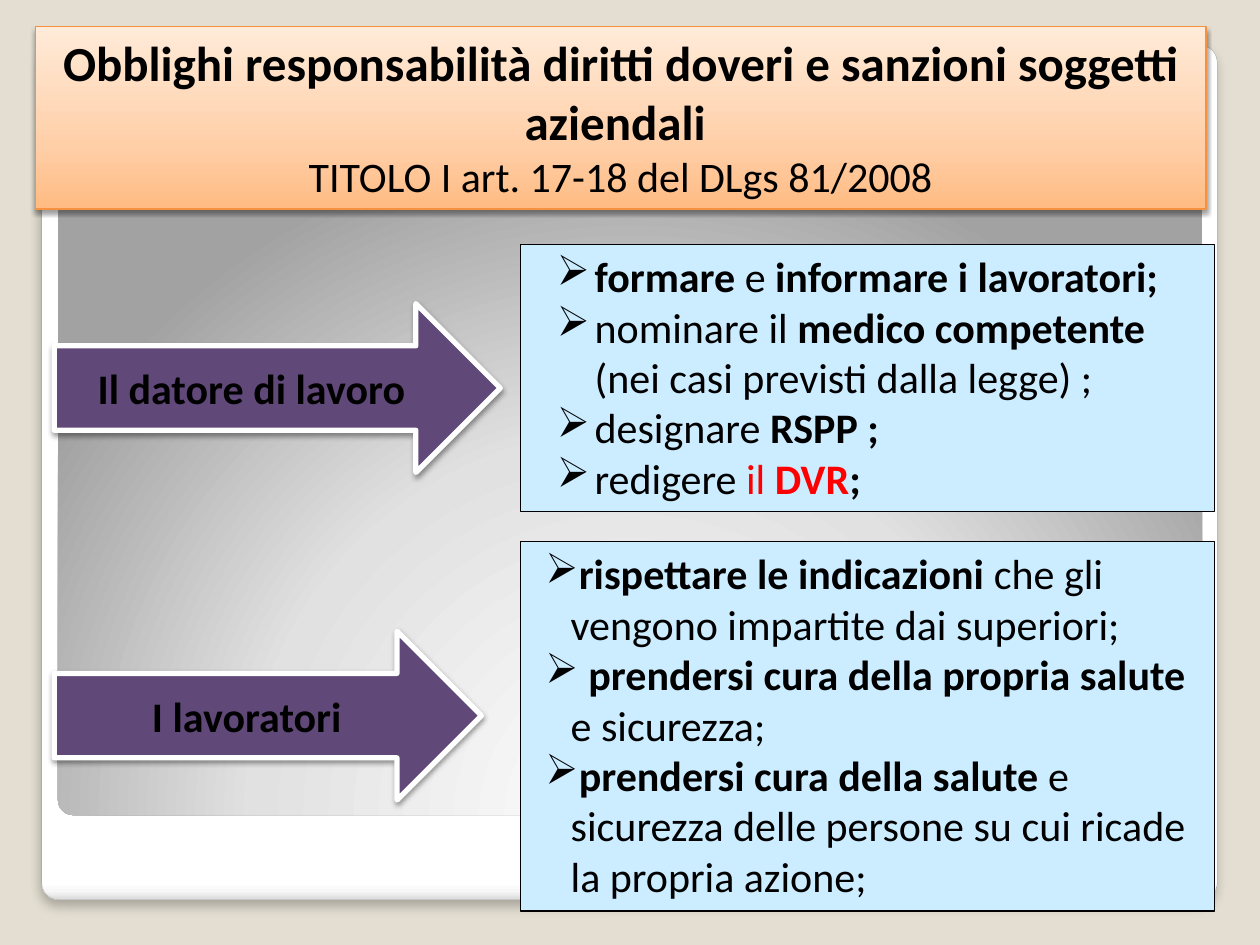
from dataclasses import dataclass
from lxml import etree
from pptx import Presentation
from pptx.dml.color import RGBColor
from pptx.enum.shapes import MSO_SHAPE
from pptx.enum.text import MSO_ANCHOR, PP_ALIGN
from pptx.oxml.ns import qn
from pptx.util import Pt

RECT = MSO_SHAPE.RECTANGLE
ROUND = MSO_SHAPE.ROUNDED_RECTANGLE
ARROW = MSO_SHAPE.RIGHT_ARROW
CENTER, LEFT = PP_ALIGN.CENTER, PP_ALIGN.LEFT
TOP, MIDDLE = MSO_ANCHOR.TOP, MSO_ANCHOR.MIDDLE

COLORS = {
    "back": "E3DED1", "edge": "A4A4A4", "orange": "F5913F", "purple": "604878",
    "sky": "CCECFF", "white": "FFFFFF", "black": "000000", "red": "FF0000",
}
FONT = "Calibri"
SIZE = 24


@dataclass
class Run:
    text: str
    bold: bool = False
    color: str = "black"


@dataclass
class Arrow:
    text: str
    top: float
    width: float


@dataclass
class Duty:
    """A box of bulleted duties; each item is a list of runs."""
    top: float
    height: float
    margin: float
    indent: float
    items: list[list[Run]]


@dataclass
class Shade:
    blur: float
    dist: float
    alpha: int


SOFT = Shade(6, 4, 25)
HARD = Shade(3.1, 1.6, 38)

ARROWS = [
    Arrow("I lavoratori", 360.7, 244.1),
    Arrow("Il datore di lavoro ", 173.5, 254.9),
]
DUTIES = [
    Duty(139.7, 152.6, 35.3, -21.6, [
        [Run("formare ", True), Run("e"), Run(" informare i lavoratori;", True)],
        [Run("nominare il "), Run("medico competente ", True),
         Run("(nei casi previsti dalla legge) ;")],
        [Run("designare"), Run(" RSPP ;", True)],
        [Run("redigere "), Run("il ", color="red"), Run("DVR", True, "red"),
         Run(";", True)],
    ]),
    Duty(309.6, 211, 21.6, -14.4, [
        [Run("rispettare le indicazioni ", True),
         Run("che gli vengono impartite dai superiori;")],
        [Run(" prendersi cura della propria salute ", True),
         Run("e sicurezza;")],
        [Run("prendersi cura della salute ", True),
         Run("e sicurezza delle persone su cui ricade la propria azione;")],
    ]),
]


def rgb(name: str) -> RGBColor:
    return RGBColor.from_string(COLORS[name])


def add(parent, tag: str, **attrs):
    """Append an XML child with the given attributes."""
    return etree.SubElement(parent, qn(tag), {k: str(v) for k, v in attrs.items()})


def draw(slide, kind, left: float, top: float, width: float, height: float,
         fill: str = "", line: str = "", weight: float = 0.75,
         shade: Shade | None = None):
    shape = slide.shapes.add_shape(kind, Pt(left), Pt(top), Pt(width), Pt(height))
    if fill:
        shape.fill.solid()
        shape.fill.fore_color.rgb = rgb(fill)
    if line:
        shape.line.color.rgb = rgb(line)
        shape.line.width = Pt(weight)
    else:
        shape.line.fill.background()
    shape.shadow.inherit = False
    if shade:
        effects = shape._element.spPr.find(qn("a:effectLst"))
        outer = add(effects, "a:outerShdw", blurRad=Pt(shade.blur),
                    dist=Pt(shade.dist), dir=90 * 60000, rotWithShape=0)
        color = add(outer, "a:srgbClr", val=COLORS["black"])
        add(color, "a:alpha", val=shade.alpha * 1000)
    return shape


def blend(shape, stops: list[tuple[int, str]], angle: int | None = None) -> None:
    """Fill with a gradient: linear with an angle, else a circle from below."""
    shape.fill.gradient()
    grad = shape._element.spPr.find(qn("a:gradFill"))
    for child in list(grad):
        grad.remove(child)
    steps = add(grad, "a:gsLst")
    for place, color in stops:
        add(add(steps, "a:gs", pos=place * 1000), "a:srgbClr", val=color)
    if angle is None:
        add(add(grad, "a:path", path="circle"), "a:fillToRect",
            l=50000, t=175000, r=50000, b=-75000)
    else:
        add(grad, "a:lin", ang=angle * 60000, scaled=0)


def write(par, runs: list[Run], align=LEFT, size: float = SIZE) -> None:
    par.alignment = align
    par.font.name = FONT
    par.font.size = Pt(size)
    for item in runs:
        run = par.add_run()
        run.text = item.text
        run.font.bold = item.bold
        run.font.color.rgb = rgb(item.color)


def bullet(par, margin: float, indent: float) -> None:
    props = par._p.get_or_add_pPr()
    props.set("marL", str(Pt(margin)))
    props.set("indent", str(Pt(indent)))
    mark = etree.Element(qn("a:buChar"), char="➢")
    tint = etree.Element(qn("a:buClr"))
    add(tint, "a:srgbClr", val=COLORS["black"])
    props.insert(0, tint)
    props.insert(1, mark)


def paras(shape, count: int, anchor):
    """Return the given number of empty paragraphs of a shape."""
    frame = shape.text_frame
    frame.word_wrap = True
    frame.vertical_anchor = anchor
    for _ in range(count - 1):
        frame.add_paragraph()
    return frame.paragraphs


def draw_back(slide) -> None:
    slide.background.fill.solid()
    slide.background.fill.fore_color.rgb = rgb("back")
    card = draw(slide, ROUND, 23.8, 25.9, 671.8, 488.2,
                line="edge", weight=0.16, shade=SOFT)
    blend(card, [(0, "FFFFFF"), (98, "FFFFFF"), (99, "F7F7F7"), (100, "DADADA")], 90)
    panel = draw(slide, ROUND, 33.1, 33.8, 653.8, 432)
    blend(panel, [(0, "FFFFFF"), (55, "E1E1E1"), (100, "A2A2A2")])
    for shape in (card, panel):
        shape.adjustments[0] = 0.02


def draw_title(slide) -> None:
    title = draw(slide, RECT, 20.2, 15.1, 668.9, 104.4, line="orange", shade=HARD)
    blend(title, [(0, "FFBB82"), (35, "FFCFA8"), (100, "FFEBD9")], 270)
    head, sub = paras(title, 2, TOP)
    write(head, [Run("Obblighi responsabilità diritti doveri e sanzioni "
                     "soggetti aziendali ", True)], CENTER, 28)
    write(sub, [Run("TITOLO I art. 17-18 del DLgs 81/2008")], CENTER)


def draw_arrow(slide, arrow: Arrow) -> None:
    shape = draw(slide, ARROW, 31, arrow.top, arrow.width, 96.5,
                 "purple", "white", 3, HARD)
    write(paras(shape, 1, MIDDLE)[0], [Run(arrow.text, True)], CENTER)


def draw_duty(slide, duty: Duty) -> None:
    box = draw(slide, RECT, 297.4, duty.top, 396.7, duty.height, "sky", "black")
    for par, runs in zip(paras(box, len(duty.items), TOP), duty.items):
        write(par, runs)
        bullet(par, duty.margin, duty.indent)


def main() -> None:
    deck = Presentation()
    deck.slide_width, deck.slide_height = Pt(720), Pt(540)
    slide = deck.slides.add_slide(deck.slide_layouts[6])
    draw_back(slide)
    draw_title(slide)
    for arrow in ARROWS:
        draw_arrow(slide, arrow)
    for duty in DUTIES:
        draw_duty(slide, duty)
    deck.save("out.pptx")


if __name__ == "__main__":
    main()
